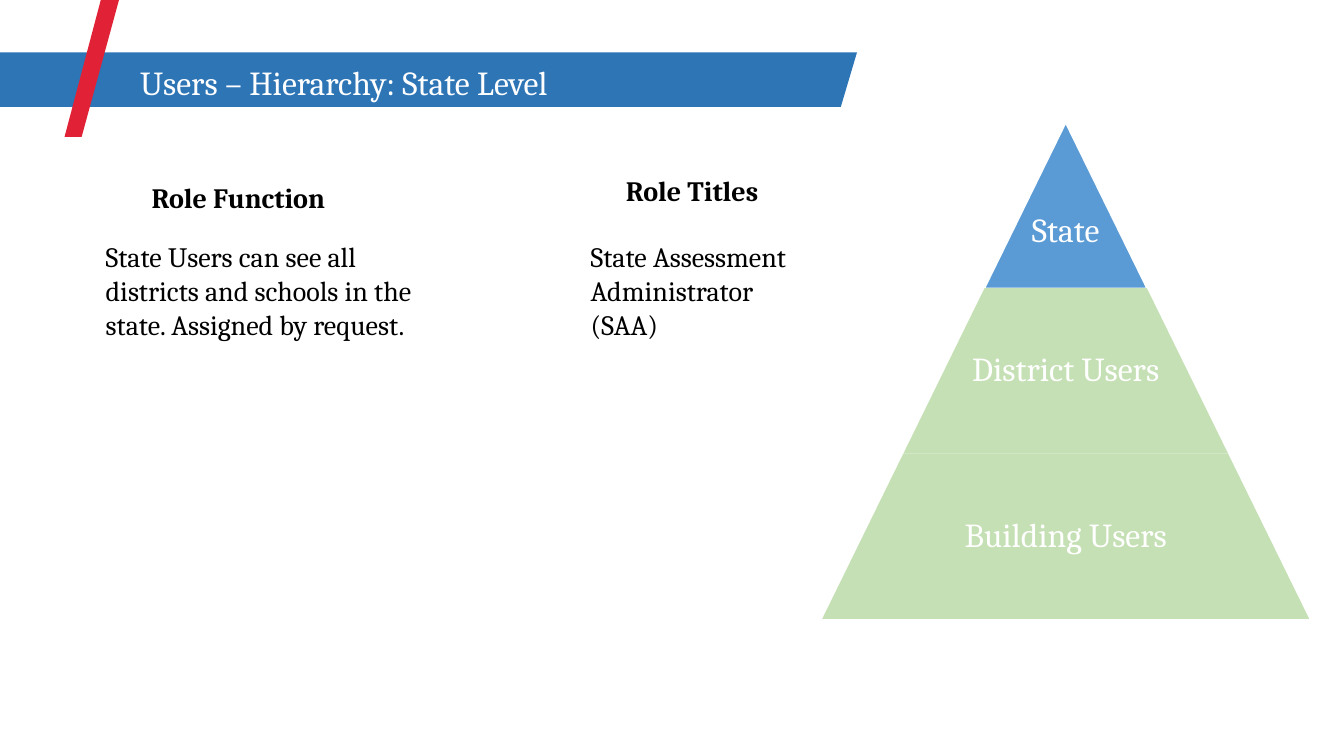
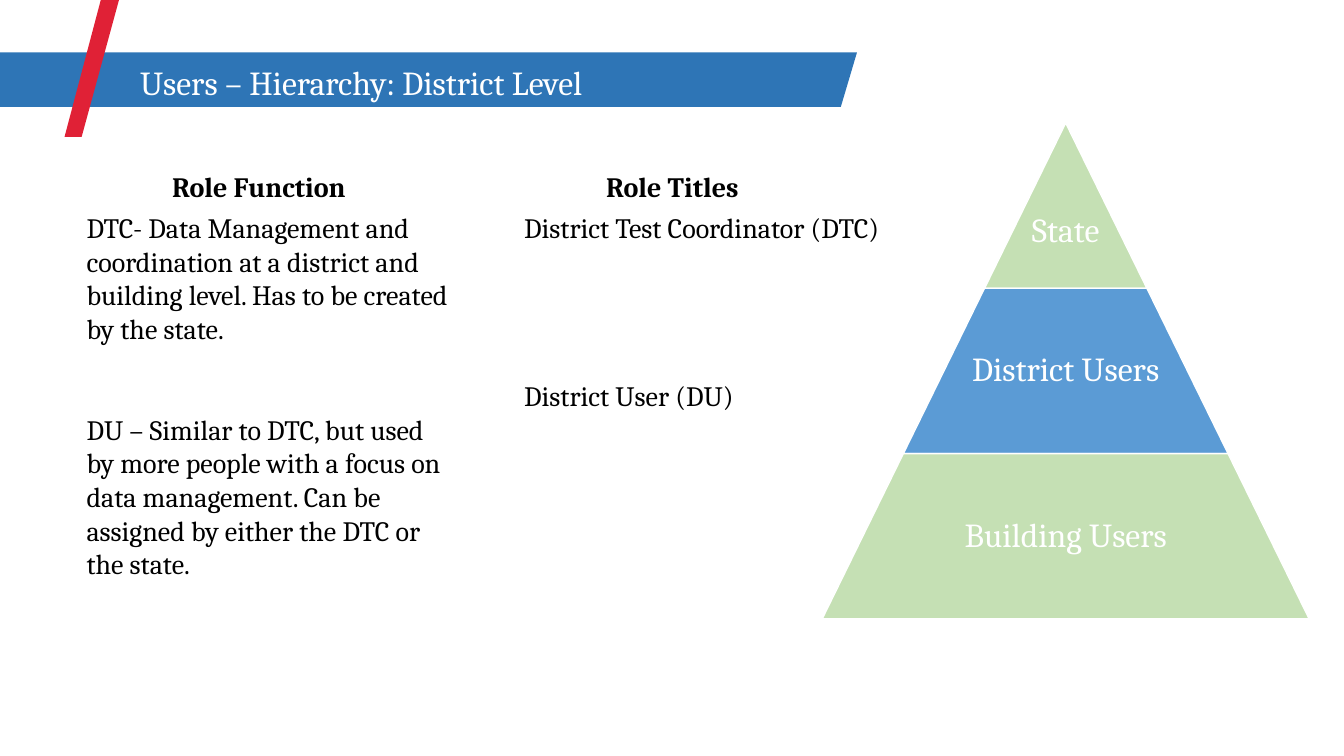
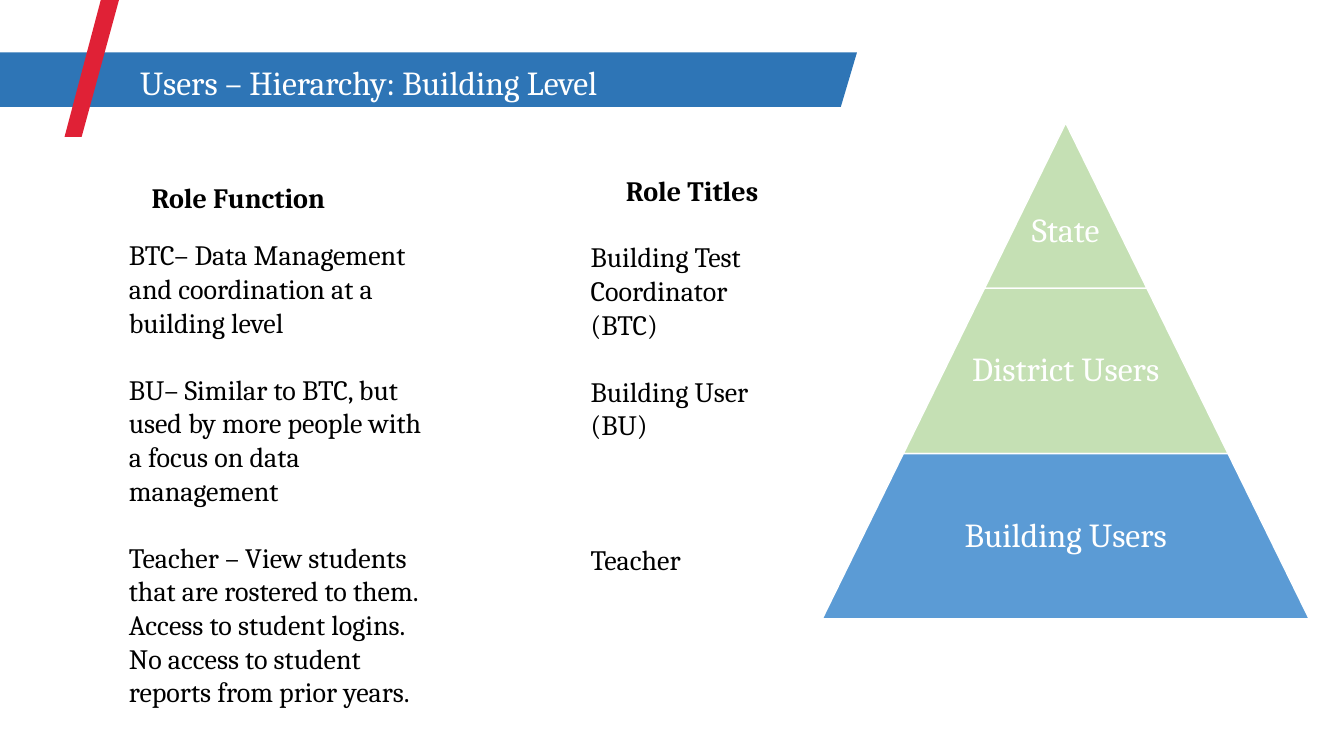
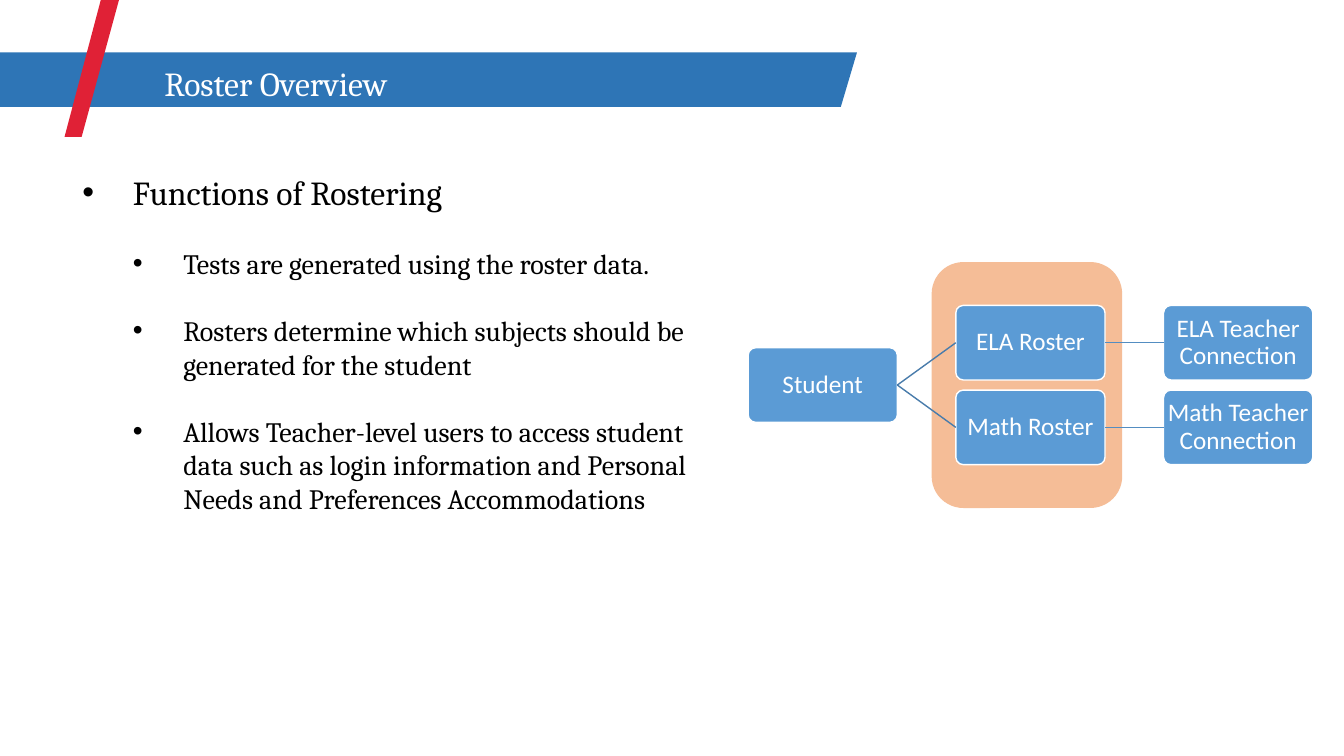
import pptx
import pptx.dml.color
import pptx.enum.shapes
import pptx.enum.text
import pptx.oxml
import pptx.oxml.ns
import pptx.util
from lxml import etree

Inches = pptx.util.Inches
Pt = pptx.util.Pt
ALIGN = pptx.enum.text.PP_ALIGN
ANCHOR = pptx.enum.text.MSO_ANCHOR
SHAPE = pptx.enum.shapes.MSO_SHAPE
qn = pptx.oxml.ns.qn

COLORS = {
    "band": "2E75B6",
    "slash": "E02136",
    "active": "5B9BD5",
    "muted": "C5E0B4",
    "panel": "ED7D31",
    "branch": "497CAB",
    "link": "538DC1",
    "white": "FFFFFF",
    "black": "000000",
}
SERIF = "Cambria"
SANS = "Calibri"
LINE = 24
LEVELS = ["State", "District Users", "Building Users"]


def rgb(name):
    return pptx.dml.color.RGBColor.from_string(COLORS[name])


def style_shape(sp, fill, line=None):
    sp.shadow.inherit = False
    sp.fill.solid()
    sp.fill.fore_color.rgb = rgb(fill)
    if line:
        sp.line.color.rgb = rgb(line)
        sp.line.width = Pt(1)
    else:
        sp.line.fill.background()


def add_run(p, text, size, color="black", font=SERIF, bold=False):
    r = p.add_run()
    r.text = text
    r.font.name = font
    r.font.size = Pt(size)
    r.font.bold = bold
    r.font.color.rgb = rgb(color)


def set_insets(tf, left, top, right, bottom):
    tf.margin_left, tf.margin_top = Inches(left), Inches(top)
    tf.margin_right, tf.margin_bottom = Inches(right), Inches(bottom)


def add_label(sp, text, size, font):
    tf = sp.text_frame
    tf.vertical_anchor = ANCHOR.MIDDLE
    p = tf.paragraphs[0]
    p.alignment = ALIGN.CENTER
    p.line_spacing = 0.9
    add_run(p, text, size, "white", font)
    return tf


def add_text(s, left, top, width, height, paragraphs, bold=False, align=ALIGN.LEFT):
    tf = s.shapes.add_textbox(Inches(left), Inches(top), Inches(width), Inches(height)).text_frame
    tf.word_wrap = True
    for i, (text, blank_lines) in enumerate(paragraphs):
        p = tf.add_paragraph() if i else tf.paragraphs[0]
        p.alignment = align
        if blank_lines:
            p.space_before = Pt(blank_lines * LINE)
        add_run(p, text, 20, bold=bold)


def add_heading(s, text, left, top, width, align=ALIGN.CENTER):
    add_text(s, left, top, width, 0.44, [(text, 0)], True, align)


def add_bullets(s, left, top, width, height, items):
    tf = s.shapes.add_textbox(Inches(left), Inches(top), Inches(width), Inches(height)).text_frame
    tf.word_wrap = True
    for i, (text, level, size) in enumerate(items):
        p = tf.add_paragraph() if i else tf.paragraphs[0]
        p.level = level
        pPr = p._p.get_or_add_pPr()
        pPr.set("marL", str(Inches(0.5 * (level + 1))))
        pPr.set("indent", str(Inches(-0.5)))
        etree.SubElement(pPr, qn("a:buFont")).set("typeface", "Arial")
        etree.SubElement(pPr, qn("a:buChar")).set("char", "•")
        if i:
            p.space_before = Pt(LINE)
        add_run(p, text, size)


def add_polygon(s, points, fill):
    corners = [(Inches(x), Inches(y)) for x, y in points]
    builder = s.shapes.build_freeform(*corners[0])
    builder.add_line_segments(corners[1:], close=True)
    sp = builder.convert_to_shape()
    style_shape(sp, fill)
    return sp


def add_layout_bands(s):
    band = add_polygon(s, [(0, 0.52), (8.5, 0.52), (8.34, 1.06), (0, 1.06)], "band")
    slash = add_polygon(s, [(0.64, 1.36), (1, 0), (1.18, 0), (0.81, 1.36)], "slash")
    for sp in (band, slash):
        s.slide_layout.shapes.element.append(sp.element)


def add_titled_slide(prs, title, left=1.29, top=0.56):
    s = prs.slides.add_slide(prs.slide_layouts[5])
    sp = s.shapes.title
    sp.left, sp.top, sp.width, sp.height = Inches(left), Inches(top), Inches(6.68), Inches(0.5)
    tf = sp.text_frame
    tf.auto_size = pptx.enum.text.MSO_AUTO_SIZE.NONE
    tf.vertical_anchor = ANCHOR.TOP
    p = tf.paragraphs[0]
    p.alignment = ALIGN.LEFT
    add_run(p, title, 24, "white")
    return s


def add_pyramid(s, active, outlined=LEVELS):
    center, top, step, height = 10.57, 1.22, 1.61, 1.64
    for i, name in enumerate(LEVELS):
        width = step * (i + 1)
        sp = s.shapes.add_shape(
            SHAPE.TRAPEZOID, Inches(center - width / 2), Inches(top + i * height),
            Inches(width), Inches(height))
        sp.adjustments[0] = step / 2 / min(width, height)
        style_shape(sp, "active" if name == active else "muted",
                    "white" if name in outlined else None)
        tf = add_label(sp, name, 24, SERIF)
        tf.word_wrap = False
        set_insets(tf, 0, 0, 0, height / 3 / (i + 1) if i else 0.03)


def add_node(s, text, left, top):
    sp = s.shapes.add_shape(SHAPE.ROUNDED_RECTANGLE, Inches(left), Inches(top),
                            Inches(1.48), Inches(0.74))
    sp.adjustments[0] = 0.1
    style_shape(sp, "active", "white")
    tf = add_label(sp, text, 18, SANS)
    tf.word_wrap = True
    set_insets(tf, 0, 0, 0, 0)
    return sp


def connect(s, start, end, color):
    c = s.shapes.add_connector(pptx.enum.shapes.MSO_CONNECTOR.STRAIGHT, 0, 0, 0, 0)
    c.begin_connect(start, 3)
    c.end_connect(end, 1)
    c.line.color.rgb = rgb(color)
    c.line.width = Pt(1)
    etree.SubElement(c.element.spPr, qn("a:effectLst"))


def add_roster_panel(s):
    sp = s.shapes.add_shape(SHAPE.ROUNDED_RECTANGLE, Inches(9.24), Inches(2.6),
                            Inches(1.89), Inches(2.44))
    style_shape(sp, "panel")
    color = sp.element.spPr.find(qn("a:solidFill"))[0]
    etree.SubElement(color, qn("a:alpha")).set("val", "50000")


def add_roster_tree(s):
    left, top, column, row = 7.42, 3.03, 2.06, 0.84
    student = add_node(s, "Student", left, top + row / 2)
    for i, subject in enumerate(["ELA", "Math"]):
        y = top + i * row
        roster = add_node(s, f"{subject} Roster", left + column, y)
        teacher = add_node(s, f"{subject} Teacher Connection", left + 2 * column, y)
        connect(s, student, roster, "branch")
        connect(s, roster, teacher, "link")


def add_role_headings(s):
    add_heading(s, "Role Function", 0.95, 1.74, 2.83)
    add_heading(s, "Role Titles", 5.76, 1.67, 2.21)


def build_state(prs):
    s = add_titled_slide(prs, "Users – Hierarchy: State Level")
    add_layout_bands(s)
    add_pyramid(s, "State", ["State"])
    add_role_headings(s)
    add_text(s, 0.95, 2.33, 3.44, 1.45, [
        ("State Users can see all districts and schools in the state. Assigned by request.", 0)])
    add_text(s, 5.76, 2.33, 2.35, 1.11, [
        ("State Assessment", 0), ("Administrator", 0), ("(SAA)", 0)])


def build_district(prs):
    s = add_titled_slide(prs, "Users – Hierarchy: District Level")
    add_pyramid(s, "District Users")
    add_heading(s, "Role Function", 1.61, 1.63, 3, ALIGN.LEFT)
    add_heading(s, "Role Titles", 5.17, 1.63, 3)
    add_text(s, 0.76, 2.04, 3.85, 4.44, [
        ("DTC- Data Management and coordination at a district and building level. "
         "Has to be created by the state.", 0),
        ("DU – Similar to DTC, but used by more people with a focus on data management. "
         "Can be assigned by either the DTC or the state.", 2)])
    add_text(s, 5.1, 2.04, 3.82, 2.46, [
        ("District Test Coordinator (DTC)", 0), ("District User (DU)", 4)])


def build_building(prs):
    s = add_titled_slide(prs, "Users – Hierarchy: Building Level")
    add_pyramid(s, "Building Users")
    add_role_headings(s)
    add_text(s, 1.18, 2.31, 3.26, 5.15, [
        ("BTC– Data Management and coordination at a building level", 0),
        ("BU– Similar to BTC, but used by more people with a focus on data management", 1),
        ("Teacher – View students that are rostered to them. Access to student logins. "
         "No access to student reports from prior years.", 1)])
    add_text(s, 5.76, 2.33, 2.1, 3.47, [
        ("Building Test Coordinator (BTC)", 0), ("Building User (BU)", 1), ("Teacher", 3)])


def build_roster(prs):
    s = add_titled_slide(prs, "Roster Overview", 1.53, 0.57)
    add_bullets(s, 0.72, 1.66, 6.3, 4.27, [
        ("Functions of Rostering", 0, 24),
        ("Tests are generated using the roster data.", 1, 20),
        ("Rosters determine which subjects should be generated for the student", 1, 20),
        ("Allows Teacher-level users to access student data such as login information "
         "and Personal Needs and Preferences Accommodations", 1, 20)])
    add_roster_panel(s)
    add_roster_tree(s)


def main():
    prs = pptx.Presentation()
    prs.slide_width, prs.slide_height = Inches(13.33), Inches(7.5)
    build_state(prs)
    build_district(prs)
    build_building(prs)
    build_roster(prs)
    prs.save("out.pptx")


if __name__ == "__main__":
    main()
